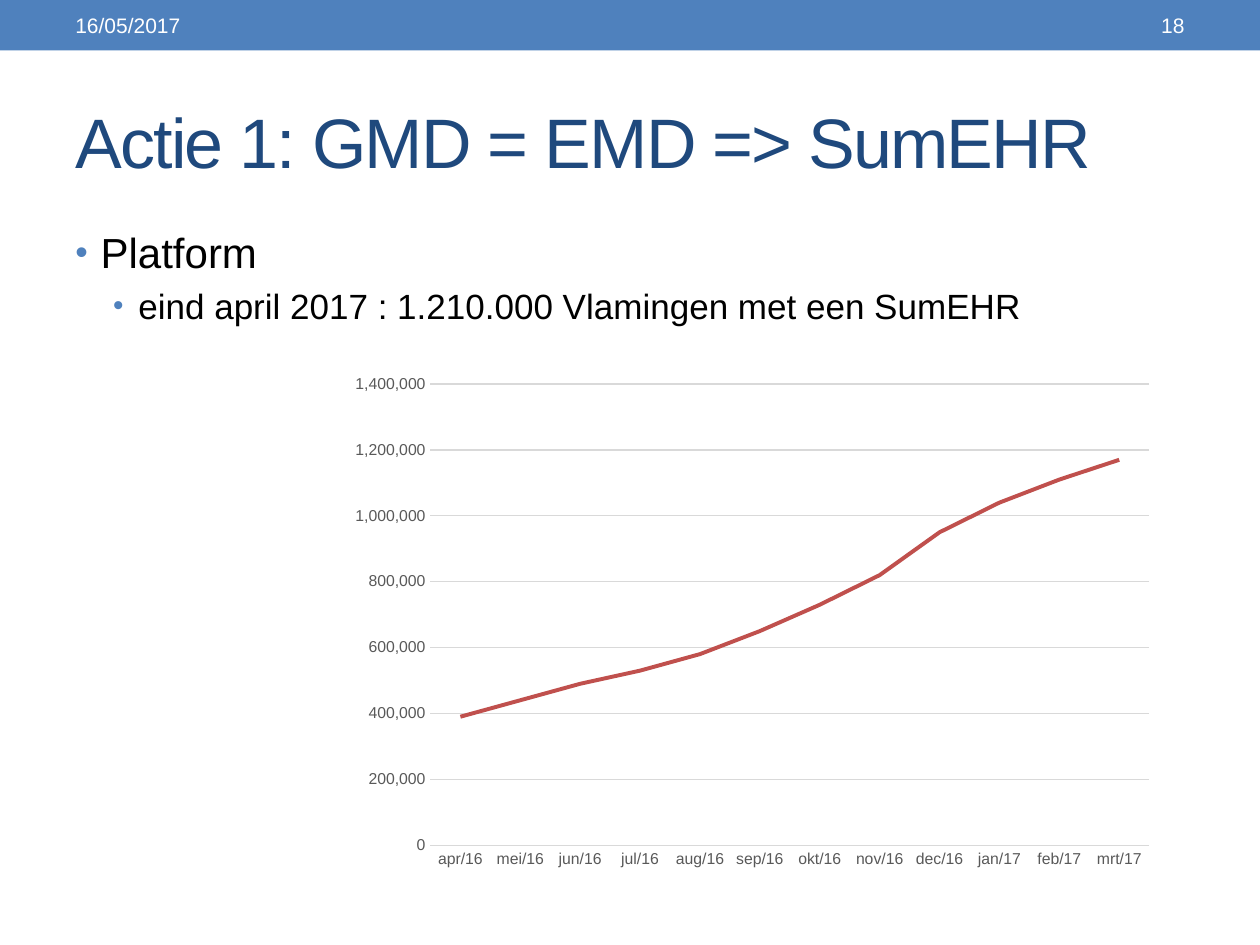
from dataclasses import dataclass

from lxml.etree import SubElement
from pptx import Presentation
from pptx.chart.data import CategoryChartData
from pptx.dml.color import RGBColor
from pptx.enum.chart import XL_CHART_TYPE, XL_MARKER_STYLE, XL_TICK_MARK
from pptx.enum.shapes import MSO_SHAPE
from pptx.enum.text import MSO_ANCHOR, PP_ALIGN
from pptx.oxml import parse_xml
from pptx.oxml.ns import nsdecls, qn
from pptx.util import Cm, Pt

# Content
DATE, NUMBER = "16/05/2017", "18"
TITLE = "Actie 1: GMD = EMD => SumEHR"
BULLETS = [  # text, level
    ("Platform", 0),
    ("eind april 2017 : 1.210.000 Vlamingen met een SumEHR", 1),
]
SERIES = "Series 1"
PATIENTS = {
    "apr/16": 390000, "mei/16": 440000, "jun/16": 490000, "jul/16": 530000,
    "aug/16": 580000, "sep/16": 650000, "okt/16": 730000, "nov/16": 820000,
    "dec/16": 950000, "jan/17": 1040000, "feb/17": 1110000, "mrt/17": 1170000,
}
PLOT = {"x": 0.116, "y": 0.051, "w": 0.863, "h": 0.889}


@dataclass(frozen=True)
class Theme:
    font: str = "Arial"
    accent: str = "4F81BD"
    title: str = "1F497D"
    text: str = "000000"
    light: str = "FFFFFF"
    line: str = "C0504D"
    grid: str = "D9D9D9"
    label: str = "595959"
    title_size: int = 40
    body_sizes: tuple = (24, 20)
    header_size: int = 12
    label_size: int = 9


T = Theme()
WIDTH, HEIGHT, MARGIN = 25.4, 19.05, 1.27
INNER = WIDTH - 2 * MARGIN


def rgb(value):
    return RGBColor.from_string(value)


def style(font, size, color):
    font.name, font.size = T.font, Pt(size)
    font.color.rgb = rgb(color)


def add_text(s, box, text, size, color, anchor=MSO_ANCHOR.MIDDLE, align=PP_ALIGN.LEFT):
    tf = s.shapes.add_textbox(*map(Cm, box)).text_frame
    tf.word_wrap, tf.vertical_anchor = True, anchor
    tf.text = text
    for p in tf.paragraphs:
        p.alignment = align
        for r in p.runs:
            style(r.font, size, color)
    return tf


def add_bullet(p, level):
    size = T.body_sizes[level]
    p.level, p.space_before = level, Pt(0.2 * size)
    p.runs[0].font.size = Pt(size)
    pPr = p._p.get_or_add_pPr()
    pPr.set("marL", str(Cm(0.51 + 0.76 * level)))
    pPr.set("indent", str(-Cm(0.51)))
    SubElement(SubElement(pPr, qn("a:buClr")), qn("a:srgbClr"), val=T.accent)
    SubElement(pPr, qn("a:buSzPct"), val="85000")
    SubElement(pPr, qn("a:buFont"), typeface=T.font)
    SubElement(pPr, qn("a:buChar"), char="•")


def style_line(line, color, width):
    line.color.rgb = rgb(color)
    line.width = Pt(width)


def add_line_chart(s, box):
    data = CategoryChartData(number_format="#,##0")
    data.categories = list(PATIENTS)
    data.add_series(SERIES, list(PATIENTS.values()))
    chart = s.shapes.add_chart(XL_CHART_TYPE.LINE, *map(Cm, box), data).chart
    chart.has_legend = chart.has_title = False
    style(chart.font, 10, T.text)

    plot = chart.plots[0]
    plot.vary_by_categories = False
    series = plot.series[0]
    series.smooth = False
    series.marker.style = XL_MARKER_STYLE.NONE
    style_line(series.format.line, T.line, 2.25)

    # Axes
    cat, val = chart.category_axis, chart.value_axis
    for axis in (cat, val):
        axis.major_tick_mark = axis.minor_tick_mark = XL_TICK_MARK.NONE
        style(axis.tick_labels.font, T.label_size, T.label)
    style_line(cat.format.line, T.grid, 0.75)
    style_line(val.major_gridlines.format.line, T.grid, 0.75)
    val.format.line.fill.background()
    val.minimum_scale, val.maximum_scale, val.major_unit = 0, 1400000, 200000
    val.tick_labels.number_format = "#,##0"
    val.tick_labels.number_format_is_linked = False

    # Inner plot area
    area = chart._chartSpace.chart.plotArea
    for old in area.findall(qn("c:layout")):
        area.remove(old)
    sizes = "".join(f'<c:{k} val="{v}"/>' for k, v in PLOT.items())
    area.insert(0, parse_xml(
        f'<c:layout {nsdecls("c")}><c:manualLayout><c:layoutTarget val="inner"/>'
        f'<c:xMode val="edge"/><c:yMode val="edge"/>{sizes}'
        "</c:manualLayout></c:layout>"))


def main():
    prs = Presentation()
    prs.slide_width, prs.slide_height = Cm(WIDTH), Cm(HEIGHT)
    s = prs.slides.add_slide(prs.slide_layouts[6])

    # Header band
    band = s.shapes.add_shape(MSO_SHAPE.RECTANGLE, 0, 0, Cm(WIDTH), Cm(1.02))
    band.shadow.inherit = False
    band.fill.solid()
    band.fill.fore_color.rgb = rgb(T.accent)
    band.line.fill.background()
    add_text(s, (MARGIN, 0.05, 8.05, 0.91), DATE, T.header_size, T.light)
    add_text(s, (WIDTH - MARGIN - 2.97, 0.05, 2.97, 0.91), NUMBER,
             T.header_size, T.light, align=PP_ALIGN.RIGHT)

    # Title
    tf = add_text(s, (MARGIN, 1.47, INNER, 2.74), TITLE, T.title_size, T.title)
    tf.paragraphs[0].runs[0].font._element.set("spc", "-100")

    # Bullets
    tf = add_text(s, (MARGIN, 4.45, INNER, 13.54), "\n".join(t for t, _ in BULLETS),
                  T.body_sizes[0], T.text, MSO_ANCHOR.TOP)
    for p, (_, level) in zip(tf.paragraphs, BULLETS):
        add_bullet(p, level)

    # Chart
    add_line_chart(s, (6.73, 7.21, 16.79, 10.46))
    prs.save("out.pptx")


if __name__ == "__main__":
    main()
